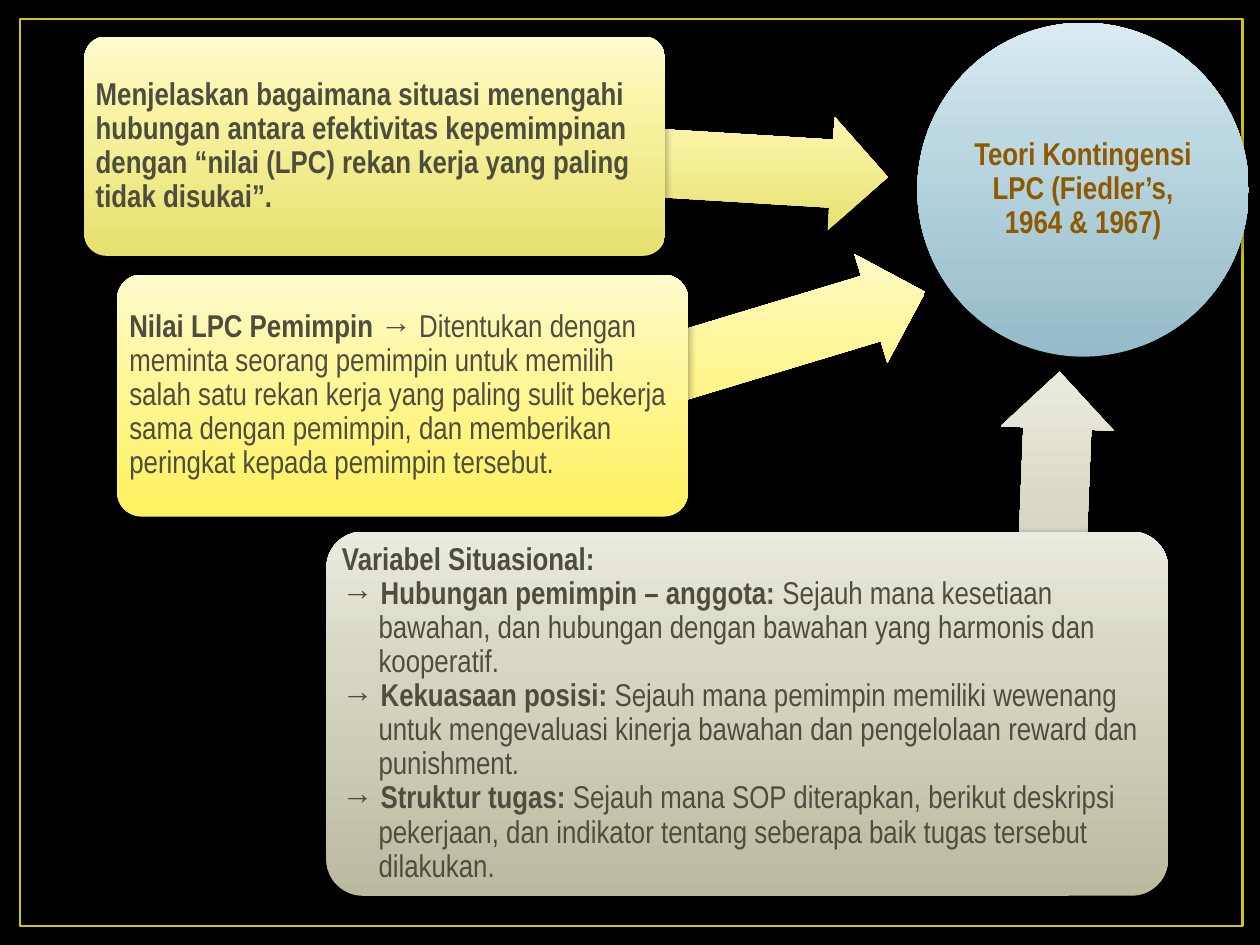
from lxml.etree import SubElement
from pptx import Presentation
from pptx.dml.color import RGBColor
from pptx.enum.shapes import MSO_SHAPE as SHAPE
from pptx.enum.text import MSO_ANCHOR as ANCHOR, PP_ALIGN as ALIGN
from pptx.oxml import parse_xml
from pptx.oxml.ns import nsdecls, qn
from pptx.util import Pt

COLORS = {
    "background": "000000",
    "frame": "CFC60D",
    "theory": "8E5A00",
    "body": "4E4D3E",
    "shadow": "000000",
}
GRADIENTS = {
    "blue": ("94BBC8", "BCD8E2", "DBEBF1"),
    "yellow": ("FEF25E", "FFF7A2", "FFFBCF"),
    "olive": ("E6E06F", "F9F3A3", "FFFBCD"),
    "stone": ("BBBA9F", "D8D7C4", "EBEBDF"),
}
FONT = "Arial Narrow"
CARD_INSET = 0.029
CIRCLE_INSET = 0.146
HANGING = 20.9

CARDS = [
    {
        "gradient": "yellow",
        "arrow": (240.5, 177.1, 294.5, 163.2),
        "box": (67, 157, 326.2, 138.2),
        "paragraphs": [
            ("Nilai LPC Pemimpin → ",
             "Ditentukan dengan meminta seorang pemimpin untuk memilih salah satu "
             "rekan kerja yang paling sulit bekerja sama dengan pemimpin, dan "
             "memberikan peringkat kepada pemimpin tersebut."),
        ],
    },
    {
        "gradient": "olive",
        "arrow": (213.8, 59.8, 293.8, 183.5),
        "box": (48.2, 20.9, 331.9, 125.3),
        "paragraphs": [
            ("Menjelaskan bagaimana situasi menengahi hubungan antara efektivitas "
             "kepemimpinan dengan “nilai (LPC) rekan kerja yang paling tidak disukai”.",),
        ],
    },
    {
        "gradient": "stone",
        "arrow": (477.4, 303.1, 246.2, 92.3),
        "box": (186.5, 303.8, 481, 208.1),
        "paragraphs": [
            ("Variabel Situasional:",),
            ("→ Hubungan pemimpin – anggota: ",
             "Sejauh mana kesetiaan bawahan, dan hubungan dengan bawahan yang "
             "harmonis dan kooperatif."),
            ("→ Kekuasaan posisi: ",
             "Sejauh mana pemimpin memiliki wewenang untuk mengevaluasi kinerja "
             "bawahan dan pengelolaan reward dan punishment."),
            ("→ Struktur tugas: ",
             "Sejauh mana SOP diterapkan, berikut deskripsi pekerjaan, dan indikator "
             "tentang seberapa baik tugas tersebut dilakukan."),
        ],
    },
]


def rgb(name):
    """Return the named colour."""
    return RGBColor.from_string(COLORS[name])


def add_frame(slide):
    """Draw the thin outline around the slide."""
    frame = slide.shapes.add_shape(SHAPE.RECTANGLE, Pt(11.5), Pt(10.8), Pt(698.4), Pt(518.4))
    frame.shadow.inherit = False
    frame.fill.background()
    frame.line.color.rgb = rgb("frame")
    frame.line.width = Pt(1.5)


def add_shaded(slide, kind, box, gradient, adjustments=()):
    """Draw a borderless shape with an upward gradient and a soft shadow."""
    shape = slide.shapes.add_shape(kind, *map(Pt, box))
    for index, value in enumerate(adjustments):
        shape.adjustments[index] = value
    shape.line.fill.background()
    stops = "".join(
        f'<a:gs pos="{position}"><a:srgbClr val="{color}"/></a:gs>'
        for position, color in zip((0, 65000, 100000), GRADIENTS[gradient])
    )
    properties = shape.element.spPr
    properties.find(qn("a:prstGeom")).addnext(parse_xml(
        f'<a:gradFill {nsdecls("a")} rotWithShape="0"><a:gsLst>{stops}</a:gsLst>'
        '<a:lin ang="16200000" scaled="0"/></a:gradFill>'
    ))
    shape.shadow.inherit = False
    shadow = SubElement(
        properties.find(qn("a:effectLst")), qn("a:outerShdw"),
        blurRad=str(Pt(5)), dist=str(Pt(2)), dir="5400000", rotWithShape="0",
    )
    shade = SubElement(shadow, qn("a:srgbClr"), val=COLORS["shadow"])
    SubElement(shade, qn("a:alpha"), val="43000")
    return shape


def add_text(slide, box, inset, margin, paragraphs, color, align=ALIGN.LEFT):
    """Write paragraphs, each a bold lead and an optional plain rest, inside a box."""
    left, top, width, height = box
    dx, dy = inset
    textbox = slide.shapes.add_textbox(
        Pt(left + dx), Pt(top + dy), Pt(width - 2 * dx), Pt(height - 2 * dy))
    frame = textbox.text_frame
    frame.word_wrap = True
    frame.vertical_anchor = ANCHOR.MIDDLE
    frame.margin_left = frame.margin_right = Pt(margin)
    frame.margin_top = frame.margin_bottom = Pt(margin)
    for index, parts in enumerate(paragraphs):
        paragraph = frame.add_paragraph() if index else frame.paragraphs[0]
        paragraph.alignment = align
        paragraph.line_spacing = 0.9
        if index:
            indents = paragraph._p.get_or_add_pPr()
            indents.set("marL", str(Pt(HANGING)))
            indents.set("indent", str(-Pt(HANGING)))
        for order, words in enumerate(parts):
            run = paragraph.add_run()
            run.text = words
            run.font.name = FONT
            run.font.size = Pt(18)
            run.font.bold = order == 0
            run.font.color.rgb = rgb(color)


def add_theory(slide):
    """Draw the circle that names the theory."""
    box = (524.2, 13, 189.4, 190.8)
    add_shaded(slide, SHAPE.OVAL, box, "blue")
    inset = (box[2] * CIRCLE_INSET, box[3] * CIRCLE_INSET)
    title = [("Teori Kontingensi LPC (Fiedler’s, 1964 & 1967)",)]
    add_text(slide, box, inset, 0.9, title, "theory", ALIGN.CENTER)


def add_card(slide, gradient, arrow, box, paragraphs):
    """Draw a text card and the arrow leading from it to the theory."""
    left, top, length, rotation = arrow
    pointer = add_shaded(
        slide, SHAPE.LEFT_ARROW, (left, top, length, 64.8), gradient, (0.6, 0.5))
    pointer.rotation = rotation
    add_shaded(slide, SHAPE.ROUNDED_RECTANGLE, box, gradient, (0.1,))
    inset = box[3] * CARD_INSET
    add_text(slide, box, (inset, inset), 2.9, paragraphs, "body")


def main():
    """Build the slide and save it."""
    deck = Presentation()
    deck.slide_width, deck.slide_height = Pt(720), Pt(540)
    slide = deck.slides.add_slide(deck.slide_layouts[6])
    slide.background.fill.solid()
    slide.background.fill.fore_color.rgb = rgb("background")
    add_frame(slide)
    add_theory(slide)
    for card in CARDS:
        add_card(slide, **card)
    deck.save("out.pptx")


if __name__ == "__main__":
    main()
